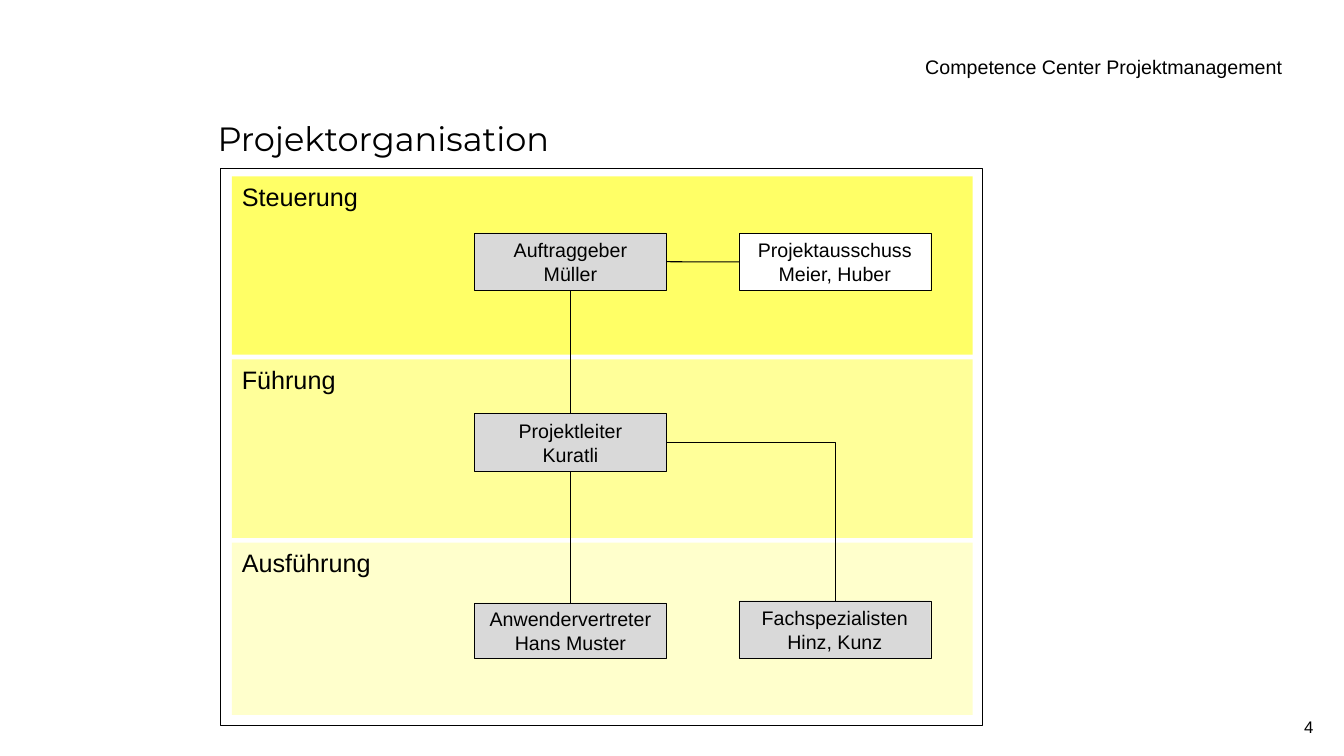
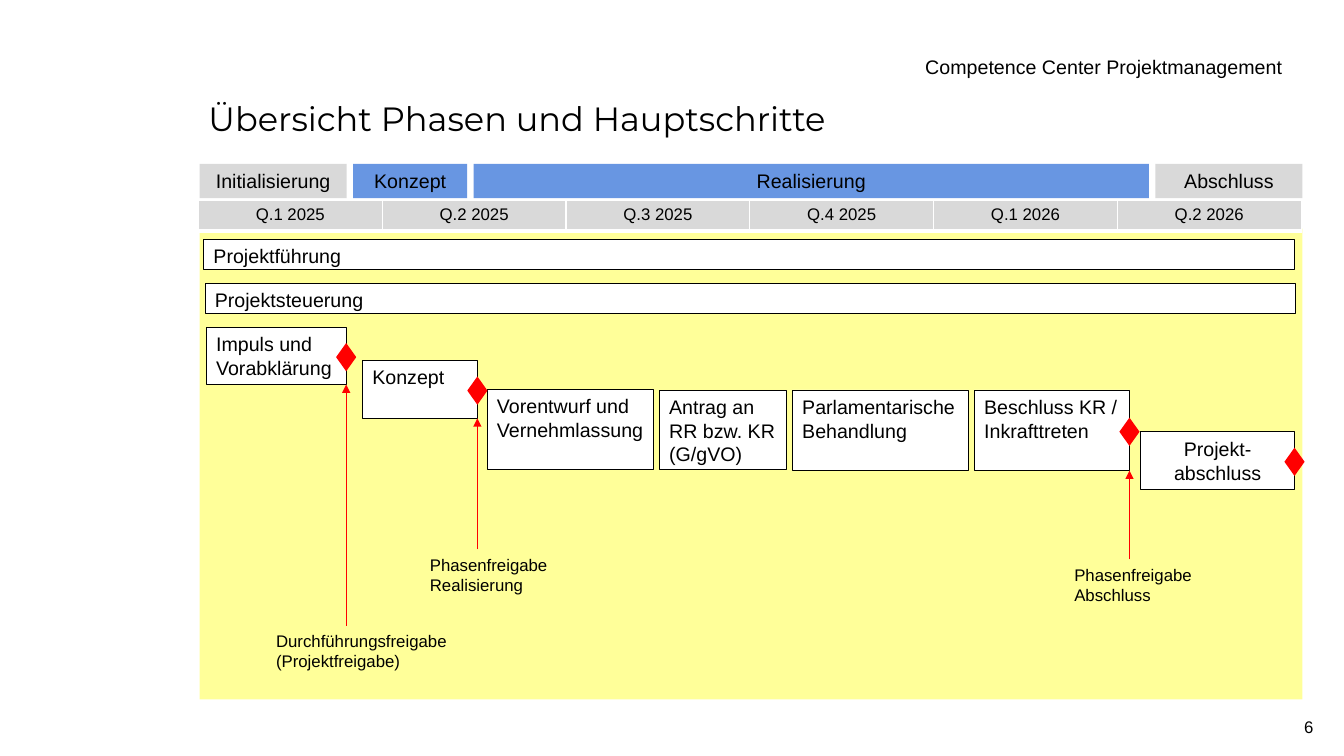
import pptx
import pptx.util
import pptx.dml.color
import pptx.enum.shapes
import pptx.enum.text
import pptx.oxml
import pptx.oxml.ns

Pt = pptx.util.Pt
RGB = pptx.dml.color.RGBColor
SHAPE = pptx.enum.shapes.MSO_SHAPE
CONNECTOR = pptx.enum.shapes.MSO_CONNECTOR
ALIGN = pptx.enum.text.PP_ALIGN
ANCHOR = pptx.enum.text.MSO_ANCHOR
qn = pptx.oxml.ns.qn

BLACK = RGB(0x00, 0x00, 0x00)
WHITE = RGB(0xFF, 0xFF, 0xFF)
GREY = RGB(0xD9, 0xD9, 0xD9)
BLUE = RGB(0x68, 0x96, 0xE2)
RED = RGB(0xFF, 0x00, 0x00)
YELLOW = RGB(0xFF, 0xFF, 0x66)
LIGHT_YELLOW = RGB(0xFF, 0xFF, 0x99)
PALE_YELLOW = RGB(0xFF, 0xFF, 0xCC)

BODY_FONT, TITLE_FONT = "Arial", "Montserrat"
HEADER = "Competence Center Projektmanagement"
TOP, BOTTOM, RIGHT = 0, 2, 3  # connection sites of a rectangle
HAIRLINE = 0.25

# Project organisation
FRAME = (157.7, 120.2, 544.3, 398.2)
BAND_LEFT, BAND_TOP, BAND_WIDTH, BAND_STEP = 165.6, 126, 529.2, 130.8
BANDS = [  # label, fill, height
    ("Steuerung", YELLOW, 127.4),
    ("Führung", LIGHT_YELLOW, 127.4),
    ("Ausführung", PALE_YELLOW, 123.1),
]
NODE_WIDTH = 137
COLUMNS = (339, 527.8)
NODES = {  # role: (people, column, top, height, fill)
    "Auftraggeber": ("Müller", 0, 166.3, 41.3, GREY),
    "Projektausschuss": ("Meier, Huber", 1, 166.6, 41, WHITE),
    "Projektleiter": ("Kuratli", 0, 295.4, 41.3, GREY),
    "Anwendervertreter": ("Hans Muster", 0, 430.6, 39.6, GREY),
    "Fachspezialisten": ("Hinz, Kunz", 1, 429.1, 41, GREY),
}
LINKS = [  # from, site, to, site
    ("Auftraggeber", BOTTOM, "Projektleiter", TOP),
    ("Auftraggeber", RIGHT, "Projektausschuss", 1),
    ("Projektleiter", BOTTOM, "Anwendervertreter", TOP),
    ("Projektleiter", RIGHT, "Fachspezialisten", TOP),
]

# Phases and main steps
PHASE_LEFT, PHASE_TOP, PHASE_HEIGHT, PHASE_GAP = 142.6, 117, 24.5, 4.6
PHASES = [  # label, width, fill
    ("Initialisierung", 105.1, GREY),
    ("Konzept", 81.4, BLUE),
    ("Realisierung", 482.4, BLUE),
    ("Abschluss", 105.1, GREY),
]
QUARTERS = ["Q.1 2025", "Q.2 2025", "Q.3 2025", "Q.4 2025", "Q.1 2026", "Q.2 2026"]
QUARTER_TABLE = (141.8, 143.3, 787.8, 21)
PLAN_AREA = (142.6, 163.4, 787.7, 336.2)
BAR_WIDTH, BAR_HEIGHT = 779, 21.6
BARS = [("Projektführung", 145.4, 170.8), ("Projektsteuerung", 146.4, 202.3)]
STEPS = [  # paragraphs, box, ends with a milestone
    (["Impuls und Vorabklärung"], (147.3, 233.6, 100, 41), True),
    (["Konzept"], (258.9, 257.2, 82.1, 41.6), True),
    (["Vorentwurf und Vernehmlassung"], (347.9, 278, 119, 56.9), False),
    (["Antrag an", "RR bzw. KR (G/gVO)"], (470.9, 278.6, 90.9, 56.9), False),
    (["Parlamentarische Behandlung"], (565.9, 278.6, 126, 57.6), False),
    (["Beschluss KR / Inkrafttreten"], (695.9, 278.6, 110.9, 57.6), True),
]
CLOSING = (["Projekt-abschluss"], (815, 308.2, 109.7, 41.3))
MILESTONE_WIDTH, MILESTONE_HEIGHT = 14.4, 20.2
RELEASES = [  # label, released step, left, top, width
    ("Durchführungsfreigabe (Projektfreigabe)", 0, 190.1, 447.1, 195.8),
    ("Phasenfreigabe Realisierung", 1, 300, 392.4, 98.6),
    ("Phasenfreigabe Abschluss", 5, 760.3, 399.6, 108),
]


def write(tf, paragraphs, size, align=ALIGN.LEFT, font=BODY_FONT):
    for i, text in enumerate(paragraphs):
        p = tf.paragraphs[0] if i == 0 else tf.add_paragraph()
        p.alignment = align
        r = p.add_run()
        r.text = text
        r.font.size, r.font.name = Pt(size), font
        r.font.color.rgb = BLACK


def add_text(s, box, text, size, align=ALIGN.LEFT, font=BODY_FONT):
    tf = s.shapes.add_textbox(*map(Pt, box)).text_frame
    tf.word_wrap = True
    write(tf, [text], size, align, font)


def add_box(s, box, fill=None, line=None, paragraphs=(), size=14,
            align=ALIGN.LEFT, anchor=ANCHOR.TOP, kind=SHAPE.RECTANGLE):
    """Draw a shape; line is the width of a black outline, or None."""
    sp = s.shapes.add_shape(kind, *map(Pt, box))
    sp.shadow.inherit = False
    if fill is None:
        sp.fill.background()
    else:
        sp.fill.solid()
        sp.fill.fore_color.rgb = fill
    if line is None:
        sp.line.fill.background()
    else:
        sp.line.color.rgb, sp.line.width = BLACK, Pt(line)
    tf = sp.text_frame
    tf.word_wrap = True
    tf.vertical_anchor = anchor
    write(tf, paragraphs, size, align)
    return sp


def add_line(s, start=(0, 0), end=(0, 0), color=BLACK, width=0.75, kind=CONNECTOR.STRAIGHT):
    cx = s.shapes.add_connector(kind, *map(Pt, start + end))
    cx.line.color.rgb, cx.line.width = color, Pt(width)
    pptx.oxml.ns  # namespace map used by qn
    cx._element.spPr.append(pptx.oxml.parse_xml(
        f'<a:effectLst {pptx.oxml.ns.nsdecls("a")}/>'))
    return cx


def add_slide(prs, title, title_box, number):
    s = prs.slides.add_slide(prs.slide_layouts[6])
    add_text(s, (631.4, 508.3, 313.9, 21.6), number, 12, ALIGN.RIGHT)
    add_text(s, (653.8, 36, 306, 24.5), HEADER, 14)
    add_text(s, title_box, title, 24, font=TITLE_FONT)
    return s


def set_borders(cell):
    """Give a cell white borders, thicker at the bottom."""
    tc_pr = cell._tc.get_or_add_tcPr()
    for i, (side, width) in enumerate((("L", 1), ("R", 1), ("T", 1), ("B", 3))):
        tc_pr.insert(i, pptx.oxml.parse_xml(
            f'<a:ln{side} {pptx.oxml.ns.nsdecls("a")} w="{Pt(width)}"><a:solidFill>'
            f'<a:srgbClr val="{WHITE}"/></a:solidFill></a:ln{side}>'))


def build_organisation(prs):
    s = add_slide(prs, "Projektorganisation", (148.3, 80.6, 754.6, 42.5), "4")
    add_box(s, FRAME, line=0.75)
    for i, (label, fill, height) in enumerate(BANDS):
        add_box(s, (BAND_LEFT, BAND_TOP + i * BAND_STEP, BAND_WIDTH, height),
                fill, paragraphs=[label], size=18)
    nodes = {}
    for role, (people, column, top, height, fill) in NODES.items():
        nodes[role] = add_box(s, (COLUMNS[column], top, NODE_WIDTH, height), fill, HAIRLINE,
                              [role, people], align=ALIGN.CENTER, anchor=ANCHOR.MIDDLE)
    for source, source_site, target, target_site in LINKS:
        bent = source_site == RIGHT and target_site == TOP
        cx = add_line(s, width=HAIRLINE if bent else 0.75,
                      kind=CONNECTOR.ELBOW if bent else CONNECTOR.STRAIGHT)
        cx.begin_connect(nodes[source], source_site)
        cx.end_connect(nodes[target], target_site)
        if bent:
            cx._element.spPr.find(qn("a:prstGeom")).set("prst", "bentConnector2")


def add_quarters(s):
    left, top, width, height = QUARTER_TABLE
    table = s.shapes.add_table(1, len(QUARTERS), *map(Pt, QUARTER_TABLE)).table
    table.first_row = table.horz_banding = False
    for i, quarter in enumerate(QUARTERS):
        table.columns[i].width = Pt(width / len(QUARTERS))
        cell = table.cell(0, i)
        cell.fill.solid()
        cell.fill.fore_color.rgb = GREY
        set_borders(cell)
        write(cell.text_frame, [quarter], 12, ALIGN.CENTER)


def add_milestone(s, box):
    """Put a diamond on the middle of the right side of a step."""
    left, top, width, height = box
    add_box(s, (left + width - MILESTONE_WIDTH / 2, top + (height - MILESTONE_HEIGHT) / 2 + 1,
                MILESTONE_WIDTH, MILESTONE_HEIGHT), RED, kind=SHAPE.FLOWCHART_DECISION)


def build_phases(prs):
    s = add_slide(prs, "Übersicht Phasen und Hauptschritte", (141.8, 66.2, 617.8, 42.5), "6")
    add_box(s, PLAN_AREA, LIGHT_YELLOW)
    left = PHASE_LEFT
    for label, width, fill in PHASES:
        add_box(s, (left, PHASE_TOP, width, PHASE_HEIGHT), fill, paragraphs=[label],
                align=ALIGN.CENTER)
        left += width + PHASE_GAP
    add_quarters(s)
    for label, left, top in BARS:
        add_box(s, (left, top, BAR_WIDTH, BAR_HEIGHT), WHITE, HAIRLINE, [label])
    for paragraphs, box, _ in STEPS:
        sp = add_box(s, box, WHITE, HAIRLINE, paragraphs)
        sp.text_frame.margin_right = Pt(4)
    paragraphs, closing_box = CLOSING
    add_box(s, closing_box, WHITE, 0.75, paragraphs, align=ALIGN.CENTER, anchor=ANCHOR.MIDDLE)
    for box in [box for _, box, ends in STEPS if ends] + [closing_box]:
        add_milestone(s, box)
    for label, step, left, top, width in RELEASES:
        x, y, w, h = STEPS[step][1]
        cx = add_line(s, (x + w, top), (x + w, y + h), RED, 1)
        cx.line._get_or_add_ln().append(pptx.oxml.parse_xml(
            f'<a:tailEnd {pptx.oxml.ns.nsdecls("a")} type="triangle"/>'))
        add_text(s, (left, top, width, 51.1), label, 12)


def main():
    prs = pptx.Presentation()
    prs.slide_width, prs.slide_height = Pt(960), Pt(540)
    build_organisation(prs)
    build_phases(prs)
    prs.save("out.pptx")


if __name__ == "__main__":
    main()
